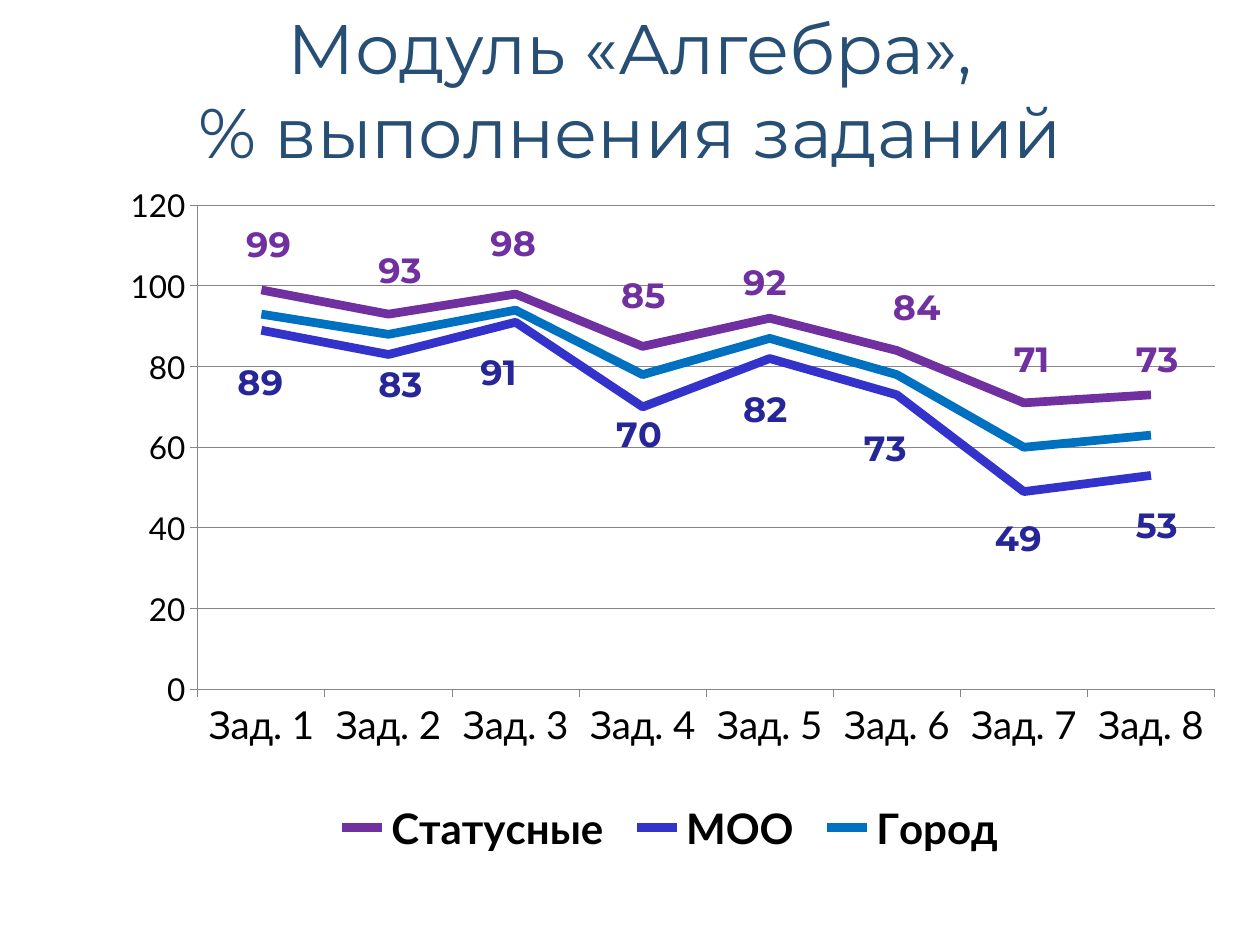
from lxml.etree import SubElement
from pptx import Presentation
from pptx.chart.data import CategoryChartData
from pptx.dml.color import RGBColor
from pptx.enum.chart import (XL_CHART_TYPE, XL_LABEL_POSITION,
                             XL_LEGEND_POSITION, XL_TICK_MARK)
from pptx.enum.text import MSO_ANCHOR, MSO_AUTO_SIZE, PP_ALIGN
from pptx.oxml.ns import qn
from pptx.util import Inches, Pt

WIDE, HIGH = 8.91, 5.94  # chart size in inches
CATS = [f"Зад. {n}" for n in range(1, 9)]
# name, line colour, label colour, values
LINES = [
    ("Статусные", "7030A0", "7030A0", [99, 93, 98, 85, 92, 84, 71, 73]),
    ("МОО", "3333CC", "262699", [89, 83, 91, 70, 82, 73, 49, 53]),
    ("Город", "0070C0", None, [93, 88, 94, 78, 87, 78, 60, 63]),
]
# Label shifts in inches from the right of each point
SHIFTS = {
    "Статусные": [(-.16, -.36), (-.12, -.34), (-.24, -.4), (-.21, -.4),
                  (-.25, -.28), (-.07, -.34), (-.12, -.34), (-.16, -.28)],
    "МОО": [(-.23, .42), (-.12, .24), (-.32, .4), (-.25, .22),
            (-.25, .41), (-.3, .43), (-.27, .38), (-.16, .4)],
}


def color(code):
    return RGBColor.from_string(code)


def style(font, **form):
    form = {"name": "Lato", "bold": False, "hue": "000000", **form}
    font.color.rgb = color(form.pop("hue"))
    for key, value in form.items():
        setattr(font, key, value)


def layout(parent, spot, modes=(), size=()):
    """Place a chart part by hand; spot and size are in inches."""
    for old in parent.findall(qn("c:layout")):
        parent.remove(old)
    root = SubElement(parent, qn("c:layout"))
    form = SubElement(root, qn("c:manualLayout"))
    shares = [(tag, round(value / whole, 4)) for tag, value, whole
              in zip("xywh", (*spot, *size), (WIDE, HIGH) * 2)]
    for tag, value in [*modes, *shares]:
        SubElement(form, qn(f"c:{tag}")).set("val", str(value))
    return root


class Deck:
    face = "Montserrat"
    edge = [("xMode", "edge"), ("yMode", "edge")]

    def __init__(self):
        self.prs = Presentation()
        self.prs.slide_width, self.prs.slide_height = Inches(10), Inches(7.5)
        self.slide = self.prs.slides.add_slide(self.prs.slide_layouts[5])

    def title(self, text, box):
        shape = self.slide.shapes.title
        for key, value in zip(("left", "top", "width", "height"), box):
            setattr(shape, key, Inches(value))
        frame = shape.text_frame
        frame.text = text
        form = {"auto_size": MSO_AUTO_SIZE.NONE, "word_wrap": True,
                "vertical_anchor": MSO_ANCHOR.MIDDLE}
        for key, value in form.items():
            setattr(frame, key, value)
        par = frame.paragraphs[0]
        par.alignment = PP_ALIGN.CENTER
        for run in par.runs:
            style(run.font, name=self.face, size=Pt(40), hue="274E75")

    def chart(self, left, top):
        data = CategoryChartData()
        data.categories = CATS
        for name, _, _, values in LINES:
            data.add_series(name, values)
        box = map(Inches, (left, top, WIDE, HIGH))
        chart = self.slide.shapes.add_chart(
            XL_CHART_TYPE.LINE, *box, data).chart
        style(chart.font, size=Pt(18))
        chart.has_title = False
        self.axes(chart)
        self.legend(chart)
        plot = chart.plots[0]
        plot.vary_by_categories = False
        for series, (name, hue, ink, _) in zip(plot.series, LINES):
            series.smooth = False
            series.format.line.color.rgb = color(hue)
            series.format.line.width = Pt(5)
            if ink:
                self.labels(series, ink, SHIFTS[name])
        area = chart._chartSpace.chart.plotArea
        modes = [("layoutTarget", "inner"), *self.edge]
        area.insert(0, layout(area, (.71, .3), modes, (8.07, 3.84)))

    def legend(self, chart):
        chart.has_legend = True
        legend = chart.legend
        legend.position = XL_LEGEND_POSITION.BOTTOM
        style(legend.font, size=Pt(24), bold=True)
        node = legend._element
        node.insert(1, layout(node, (1.7, 4.94), self.edge, (5.52, .6)))
        legend.include_in_layout = False

    def axes(self, chart):
        vals, cats = chart.value_axis, chart.category_axis
        vals.minimum_scale, vals.maximum_scale, vals.major_unit = 0, 120, 20
        vals.has_major_gridlines = True
        style(vals.tick_labels.font, size=Pt(18))
        style(cats.tick_labels.font, size=Pt(22))
        for axis in (vals, cats):
            axis.major_tick_mark = XL_TICK_MARK.OUTSIDE
        for part in (vals, cats, vals.major_gridlines):
            part.format.line.color.rgb = color("868686")
            part.format.line.width = Pt(0.5)

    def labels(self, series, ink, shifts):
        form = {"name": self.face, "size": Pt(20), "bold": True, "hue": ink}
        series.data_labels.show_value = True
        style(series.data_labels.font, **form)
        for idx in range(len(shifts)):
            label = series.points[idx].data_label
            style(label.font, **form)
            label.position = XL_LABEL_POSITION.RIGHT
        group = series.data_labels._element
        for node, spot in zip(group.findall(qn("c:dLbl")), shifts):
            node.insert(1, layout(node, spot))
        lead = group.find(qn("c:showLeaderLines"))
        if lead is None:
            lead = SubElement(group, qn("c:showLeaderLines"))
        lead.set("val", "0")


def main():
    deck = Deck()
    deck.title("Модуль «Алгебра»,\v% выполнения заданий", (0, 0.16, 10, 1.09))
    deck.chart(0.86, 1.33)
    deck.prs.save("out.pptx")


if __name__ == "__main__":
    main()
